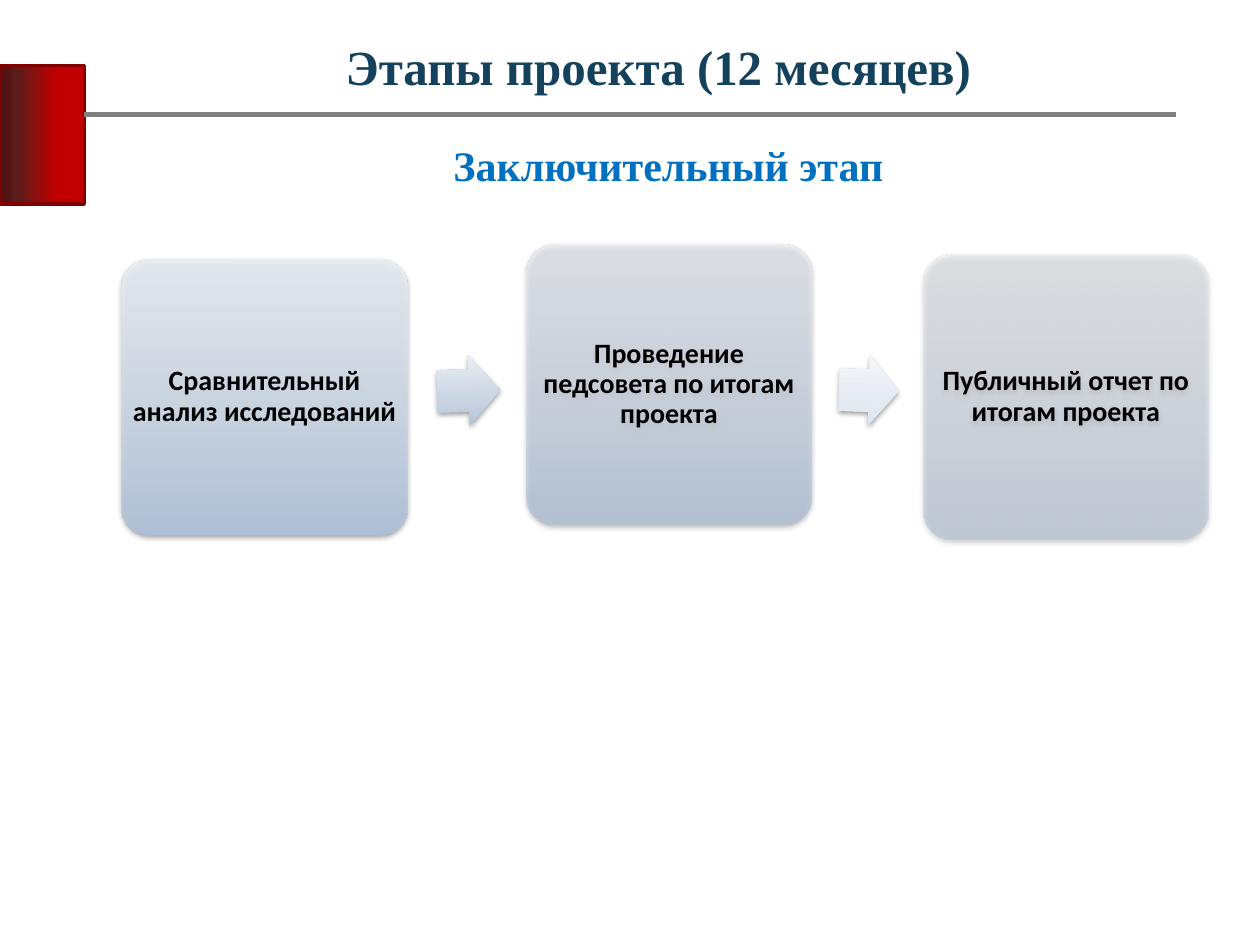
from lxml.etree import SubElement
from pptx import Presentation
from pptx.dml.color import RGBColor
from pptx.enum.shapes import MSO_CONNECTOR, MSO_SHAPE
from pptx.enum.text import MSO_ANCHOR, MSO_AUTO_SIZE, PP_ALIGN
from pptx.oxml.ns import qn
from pptx.util import Inches, Pt

TITLE = "Этапы проекта (12 месяцев)"
SUBTITLE = "Заключительный этап"
HEADING_FONT, BODY_FONT = "Times New Roman", "Calibri"
COLORS = {"title": "14425D", "subtitle": "0070C0", "text": "000000", "shadow": "000000",
          "rule": "808080", "marker_line": "800000"}

# text, (left, top, height), opacity in percent
STEPS = [
    ("Сравнительный анализ исследований", (0.97, 2.06, 2.18), 90),
    ("Проведение педсовета по итогам проекта", (4.18, 1.94, 2.22), 70),
    ("Публичный отчет по итогам проекта", (7.33, 2.02, 2.26), 50),
]
STEP_WIDTH = 2.26
# (left, top, width, height), rotation, gradient
ARROWS = [
    ((3.47, 2.82, 0.5, 0.56), -1.7, [(0, "B0C2D7"), (35, "C8D4E2"), (100, "EAEFF4")]),
    ((6.66, 2.82, 0.47, 0.56), 1.7, [(0, "DBE4ED"), (35, "E5EBF2"), (100, "F5F7FA")]),
]
STEP_GRADIENT = [(0, "AFC2DA"), (35, "C7D4E4"), (100, "EAEFF5")]
MARKER_GRADIENT = [(34, "C00000"), (80, "5A1D1B"), (94, "511413"),
                   (100, "50141B"), (100, "FFE7E0")]


def write_text(shape, text, *, size, color, font, anchor=MSO_ANCHOR.TOP,
               margins=(0.1, 0.05), line_spacing=1.0):
    frame = shape.text_frame
    frame.word_wrap = True
    frame.auto_size = MSO_AUTO_SIZE.NONE
    frame.vertical_anchor = anchor
    frame.margin_left = frame.margin_right = Inches(margins[0])
    frame.margin_top = frame.margin_bottom = Inches(margins[1])
    paragraph = frame.paragraphs[0]
    paragraph.alignment = PP_ALIGN.CENTER
    paragraph.line_spacing = line_spacing
    run = paragraph.add_run()
    run.text = text
    run.font.name = font
    run.font.size = Pt(size)
    run.font.bold = True
    run.font.color.rgb = RGBColor.from_string(color)


def add_color(parent, color, opacity=100):
    element = SubElement(parent, qn("a:srgbClr"), val=color)
    if opacity < 100:
        SubElement(element, qn("a:alpha"), val=str(opacity * 1000))


def fill_gradient(shape, stops, angle, opacity=100):
    """Fill with (percent, colour) stops; angle runs counter-clockwise."""
    shape.fill.gradient()
    shape.fill.gradient_angle = angle
    stop_list = shape.element.spPr.find(qn("a:gradFill")).find(qn("a:gsLst"))
    for stop in list(stop_list):
        stop_list.remove(stop)
    for position, color in stops:
        stop = SubElement(stop_list, qn("a:gs"), pos=str(position * 1000))
        add_color(stop, color, opacity)


def add_shadow(shape):
    effects = shape.element.spPr.find(qn("a:effectLst"))
    shadow = SubElement(effects, qn("a:outerShdw"), blurRad=str(Pt(3.1)), dist=str(Pt(1.6)),
                        dir="5400000", rotWithShape="0")
    add_color(shadow, COLORS["shadow"], 38)


def add_shape(slide, kind, box, adjustments=()):
    shape = slide.shapes.add_shape(kind, *map(Inches, box))
    shape.shadow.inherit = False
    shape.line.fill.background()
    for index, value in enumerate(adjustments):
        shape.adjustments[index] = value
    return shape


def add_header(slide):
    marker = add_shape(slide, MSO_SHAPE.RECTANGLE, (0, 0.52, 0.67, 1.1))
    fill_gradient(marker, MARKER_GRADIENT, 180)
    marker.line.color.rgb = RGBColor.from_string(COLORS["marker_line"])
    marker.line.width = Pt(2)

    rule = slide.shapes.add_connector(MSO_CONNECTOR.STRAIGHT, Inches(0.67), Inches(0.91),
                                      Inches(9.33), Inches(0.91))
    rule.line.color.rgb = RGBColor.from_string(COLORS["rule"])
    rule.line.width = Pt(3)
    SubElement(rule.element.spPr, qn("a:effectLst"))

    title = slide.shapes.title
    title.left, title.top, title.width, title.height = map(Inches, (0.89, 0.24, 8.67, 0.55))
    write_text(title, TITLE, size=28, color=COLORS["title"], font=HEADING_FONT)
    subtitle = slide.shapes.add_textbox(*map(Inches, (0.97, 1.06, 8.67, 0.55)))
    write_text(subtitle, SUBTITLE, size=24, color=COLORS["subtitle"], font=HEADING_FONT)


def add_process(slide):
    for text, (left, top, height), opacity in STEPS:
        step = add_shape(slide, MSO_SHAPE.ROUNDED_RECTANGLE,
                         (left, top, STEP_WIDTH, height), [0.1])
        fill_gradient(step, STEP_GRADIENT, 90, opacity)
        add_shadow(step)
        write_text(step, text, size=16, color=COLORS["text"], font=BODY_FONT,
                   anchor=MSO_ANCHOR.MIDDLE, margins=(0.01, 0.01), line_spacing=0.9)
    for box, rotation, gradient in ARROWS:
        arrow = add_shape(slide, MSO_SHAPE.RIGHT_ARROW, box, [0.6, 0.5])
        arrow.rotation = rotation
        fill_gradient(arrow, gradient, 90)
        add_shadow(arrow)


def main():
    presentation = Presentation()
    presentation.slide_width, presentation.slide_height = Inches(10), Inches(7.5)
    slide = presentation.slides.add_slide(presentation.slide_layouts[5])
    add_header(slide)
    add_process(slide)
    presentation.save("out.pptx")


if __name__ == "__main__":
    main()
